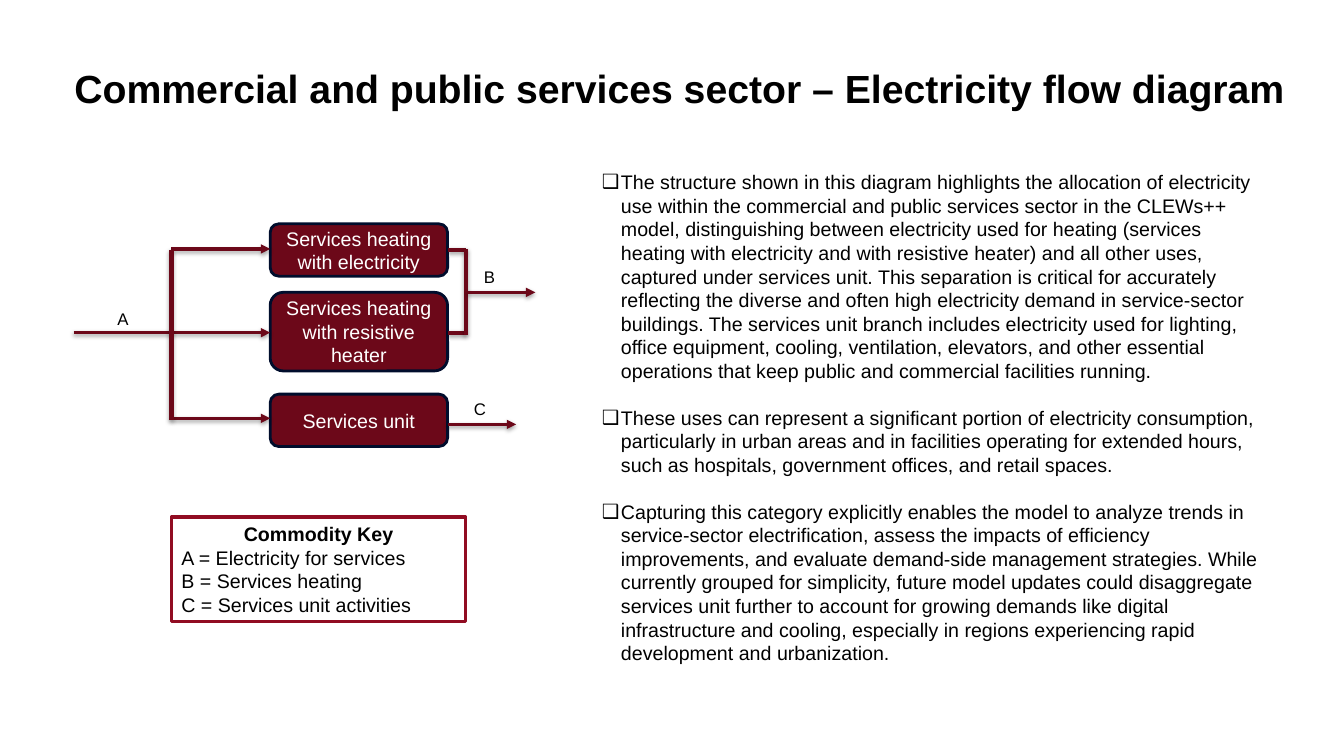
from lxml import etree
from pptx import Presentation
from pptx.dml.color import RGBColor
from pptx.enum.shapes import MSO_CONNECTOR as Connector, MSO_SHAPE as Shape
from pptx.enum.text import MSO_ANCHOR as Anchor, PP_ALIGN as Align
from pptx.oxml.ns import qn
from pptx.util import Inches, Pt

# Content
TITLE = "Commercial and public services sector – Electricity flow diagram"
NOTES = [
    "The structure shown in this diagram highlights the allocation of electricity use within the "
    "commercial and public services sector in the CLEWs++ model, distinguishing between electricity "
    "used for heating (services heating with electricity and with resistive heater) and all other "
    "uses, captured under services unit. This separation is critical for accurately reflecting the "
    "diverse and often high electricity demand in service-sector buildings. The services unit branch "
    "includes electricity used for lighting, office equipment, cooling, ventilation, elevators, and "
    "other essential operations that keep public and commercial facilities running.",
    "These uses can represent a significant portion of electricity consumption, particularly in urban "
    "areas and in facilities operating for extended hours, such as hospitals, government offices, and "
    "retail spaces.",
    "Capturing this category explicitly enables the model to analyze trends in service-sector "
    "electrification, assess the impacts of efficiency improvements, and evaluate demand-side "
    "management strategies. While currently grouped for simplicity, future model updates could "
    "disaggregate services unit further to account for growing demands like digital infrastructure "
    "and cooling, especially in regions experiencing rapid development and urbanization.",
]
KEY = ["Commodity Key", "A = Electricity for services", "B = Services heating",
       "C = Services unit activities"]
# Name, top, height, height of the incoming arrow
TECHNOLOGIES = [
    ("Services heating with electricity", 2.22, 0.52, 2.47),
    ("Services heating with resistive heater", 2.9, 0.78, 3.3),
    ("Services unit", 3.91, 0.52, 4.15),
]
# Letter, left, top, width
COMMODITIES = [("A", 0.86, 3.01, 0.72), ("B", 4.59, 2.6, 0.53), ("C", 4.4, 3.91, 0.72)]

COLORS = {"text": "000000", "box": "6C0819", "box_edge": "000D2C", "box_text": "FFFFFF",
          "flow": "6C0819", "key_edge": "910C22", "shadow": "000000"}
FONT = "Arial"

# Key positions of the diagram, in inches
SUPPLY_X, SPLIT_X, BOX_X, BOX_W, MERGE_X = 0.73, 1.7, 2.68, 1.76, 4.62
BOX_RIGHT = BOX_X + BOX_W
ARROW, BAR = 2.25, 3

prs = Presentation()
prs.slide_width, prs.slide_height = Inches(13.33), Inches(7.5)
slide = prs.slides.add_slide(prs.slide_layouts[6])


def rgb(name):
    return RGBColor.from_string(COLORS[name])


def write(shape, lines, size, color="text", align=Align.LEFT, anchor=Anchor.TOP, bold=False):
    frame = shape.text_frame
    frame.word_wrap = True
    frame.vertical_anchor = anchor
    frame.text = "\n".join(lines)
    for paragraph in frame.paragraphs:
        paragraph.alignment = align
        for run in paragraph.runs:
            run.font.name, run.font.size, run.font.bold = FONT, Pt(size), bold
            run.font.color.rgb = rgb(color)
    return frame.paragraphs


def add_text(left, top, width, height, lines, size, **style):
    box = slide.shapes.add_textbox(Inches(left), Inches(top), Inches(width), Inches(height))
    return write(box, lines, size, **style)


def add_box(kind, left, top, width, height, edge, edge_width, fill=None):
    box = slide.shapes.add_shape(kind, Inches(left), Inches(top), Inches(width), Inches(height))
    box.shadow.inherit = False
    if fill:
        box.fill.solid()
        box.fill.fore_color.rgb = rgb(fill)
    else:
        box.fill.background()
    box.line.color.rgb = rgb(edge)
    box.line.width = Pt(edge_width)
    return box


def add_flow(x1, y1, x2, y2, width=ARROW, arrow=False):
    flow = slide.shapes.add_connector(Connector.STRAIGHT, Inches(x1), Inches(y1),
                                      Inches(x2), Inches(y2))
    flow.line.color.rgb = rgb("flow")
    flow.line.width = Pt(width)
    properties = flow._element.spPr
    if arrow:
        etree.SubElement(properties.find(qn("a:ln")), qn("a:tailEnd"), type="triangle")
    effects = etree.SubElement(properties, qn("a:effectLst"))
    shadow = etree.SubElement(effects, qn("a:outerShdw"), blurRad=str(Pt(3.1)),
                              dist=str(Pt(1.6)), dir="5400000", rotWithShape="0")
    shade = etree.SubElement(shadow, qn("a:srgbClr"), val=COLORS["shadow"])
    etree.SubElement(shade, qn("a:alpha"), val="37000")


def add_bullet(paragraph):
    properties = paragraph._p.get_or_add_pPr()
    properties.set("marL", str(Inches(0.19)))
    properties.set("indent", str(Inches(-0.2)))
    color = etree.SubElement(properties, qn("a:buClr"))
    etree.SubElement(color, qn("a:srgbClr"), val=COLORS["text"])
    etree.SubElement(properties, qn("a:buFont"), typeface=FONT)
    etree.SubElement(properties, qn("a:buChar"), char="❑")


# Title
title = add_text(0.64, 0.12, 12.34, 1.04, [TITLE], 28, anchor=Anchor.BOTTOM, bold=True)
title[0].line_spacing = 0.9

# Explanation, one empty line's height between paragraphs
for number, note in enumerate(add_text(5.87, 1.64, 6.75, 5.05, NOTES, 14)):
    if number:
        note.space_before = Pt(16.8)
    add_bullet(note)

# Technologies with their incoming arrows
for name, top, height, arrow_y in TECHNOLOGIES:
    box = add_box(Shape.ROUNDED_RECTANGLE, BOX_X, top, BOX_W, height, "box_edge", 2, "box")
    write(box, [name], 14, "box_text", Align.CENTER, Anchor.MIDDLE)
    add_flow(SPLIT_X, arrow_y, BOX_X, arrow_y, arrow=True)

# Supply line and its split
supply_y = TECHNOLOGIES[1][3]
add_flow(SUPPLY_X, supply_y, SPLIT_X, supply_y)
add_flow(SPLIT_X, 2.48, SPLIT_X, 4.17, BAR)

# Heating outputs merge into B, the services unit gives C
for heating_y in (2.48, 3.3):
    add_flow(MERGE_X, heating_y, BOX_RIGHT, heating_y, BAR)
add_flow(MERGE_X, 2.47, MERGE_X, 3.32, BAR)
add_flow(4.64, 2.9, 5.31, 2.9, arrow=True)
add_flow(BOX_RIGHT, 4.21, 5.12, 4.21, arrow=True)

# Commodity letters
for letter, left, top, width in COMMODITIES:
    add_text(left, top, width, 0.3, [letter], 12, align=Align.CENTER)

# Commodity key
key_box = add_box(Shape.RECTANGLE, SPLIT_X, 5.13, MERGE_X - SPLIT_X, 1.04, "key_edge", 2.25)
heading = write(key_box, KEY, 14)[0]
heading.alignment = Align.CENTER
heading.runs[0].font.bold = True

prs.save("out.pptx")
